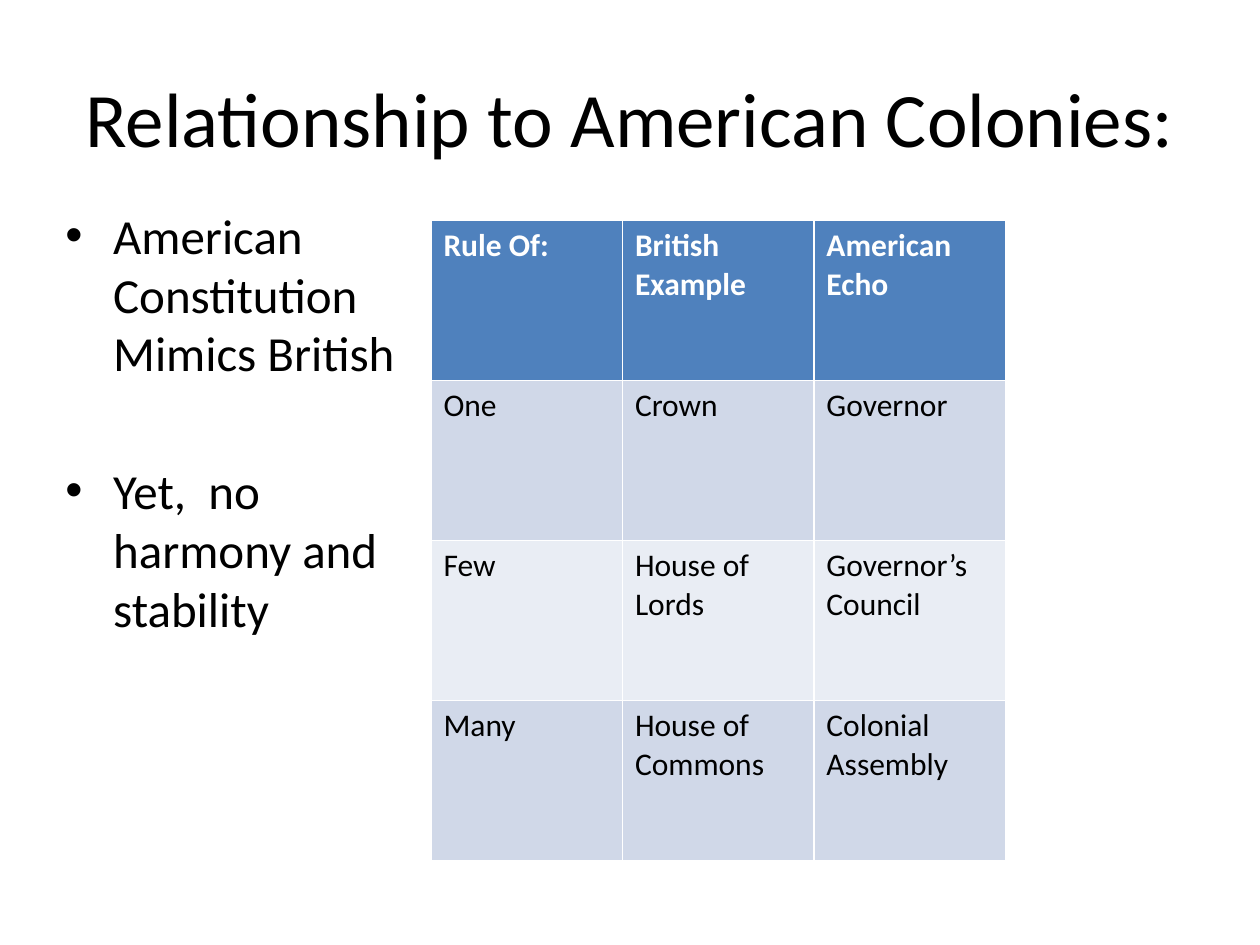
from pptx import Presentation
from pptx.dml.color import RGBColor
from pptx.enum.text import MSO_ANCHOR, PP_ALIGN
from pptx.oxml import parse_xml
from pptx.oxml.ns import nsdecls
from pptx.util import Inches, Pt

CENTER, LEFT = PP_ALIGN.CENTER, PP_ALIGN.LEFT
MIDDLE, TOP = MSO_ANCHOR.MIDDLE, MSO_ANCHOR.TOP
COLORS = {
    "text": "000000",
    "header": "4F81BD",
    "header_text": "FFFFFF",
    "odd_row": "D0D8E8",
    "even_row": "E9EDF4",
}
TITLE = "Relationship to American Colonies:"
POINTS = ["American Constitution Mimics British", "Yet,  no harmony and stability"]
RULE_ROWS = [
    ["Rule Of:", "British Example", "American Echo"],
    ["One", "Crown", "Governor"],
    ["Few", "House of Lords", "Governor’s Council"],
    ["Many", "House of Commons", "Colonial Assembly"],
]


class SlideBuilder:
    """Holds the style and the current slide, and adds each kind of element."""

    font = "Calibri"

    def __init__(self, slide):
        self.slide = slide

    def add_span(self, para, text, size, color="text", bold=False):
        span = para.add_run()
        span.text = text
        span.font.name = self.font
        span.font.size = Pt(size)
        span.font.bold = bold
        span.font.color.rgb = RGBColor.from_string(COLORS[color])

    def add_box(self, left, top, width, height, anchor):
        box = self.slide.shapes.add_textbox(
            Inches(left), Inches(top), Inches(width), Inches(height)
        )
        box.text_frame.word_wrap = True
        box.text_frame.vertical_anchor = anchor
        return box.text_frame

    def add_title(self, text, left, top, width, height):
        para = self.add_box(left, top, width, height, MIDDLE).paragraphs[0]
        para.alignment = CENTER
        self.add_span(para, text, 44)

    def add_bullets(self, points, left, top, width, height, gap):
        frame = self.add_box(left, top, width, height, TOP)
        for index, point in enumerate(points):
            para = frame.add_paragraph() if index else frame.paragraphs[0]
            para.alignment = LEFT
            if index:
                para.space_before = Pt(gap)
            properties = para._p.get_or_add_pPr()
            properties.set("marL", str(Inches(0.38)))
            properties.set("indent", str(Inches(-0.38)))
            properties.append(parse_xml(f'<a:buFont {nsdecls("a")} typeface="Arial"/>'))
            properties.append(parse_xml(f'<a:buChar {nsdecls("a")} char="•"/>'))
            self.add_span(para, point, 28)

    def add_table(self, rows, left, top, column_width, row_height):
        columns = len(rows[0])
        table = self.slide.shapes.add_table(
            len(rows), columns, Inches(left), Inches(top),
            Inches(column_width * columns), Inches(row_height * len(rows)),
        ).table
        for row_index, row in enumerate(rows):
            header = row_index == 0
            fill = "header" if header else "odd_row" if row_index % 2 else "even_row"
            for column_index, text in enumerate(row):
                cell = table.cell(row_index, column_index)
                cell.fill.solid()
                cell.fill.fore_color.rgb = RGBColor.from_string(COLORS[fill])
                color = "header_text" if header else "text"
                self.add_span(cell.text_frame.paragraphs[0], text, 18, color, header)


def main():
    deck = Presentation()
    deck.slide_width, deck.slide_height = Inches(10), Inches(7.5)
    page = SlideBuilder(deck.slides.add_slide(deck.slide_layouts[6]))
    page.add_title(TITLE, 0.5, 0.3, 9, 1.25)
    page.add_bullets(POINTS, 0.42, 1.58, 3.08, 5.12, gap=45)
    page.add_table(RULE_ROWS, 3.42, 1.75, column_width=1.52, row_height=1.27)
    deck.save("out.pptx")


if __name__ == "__main__":
    main()
